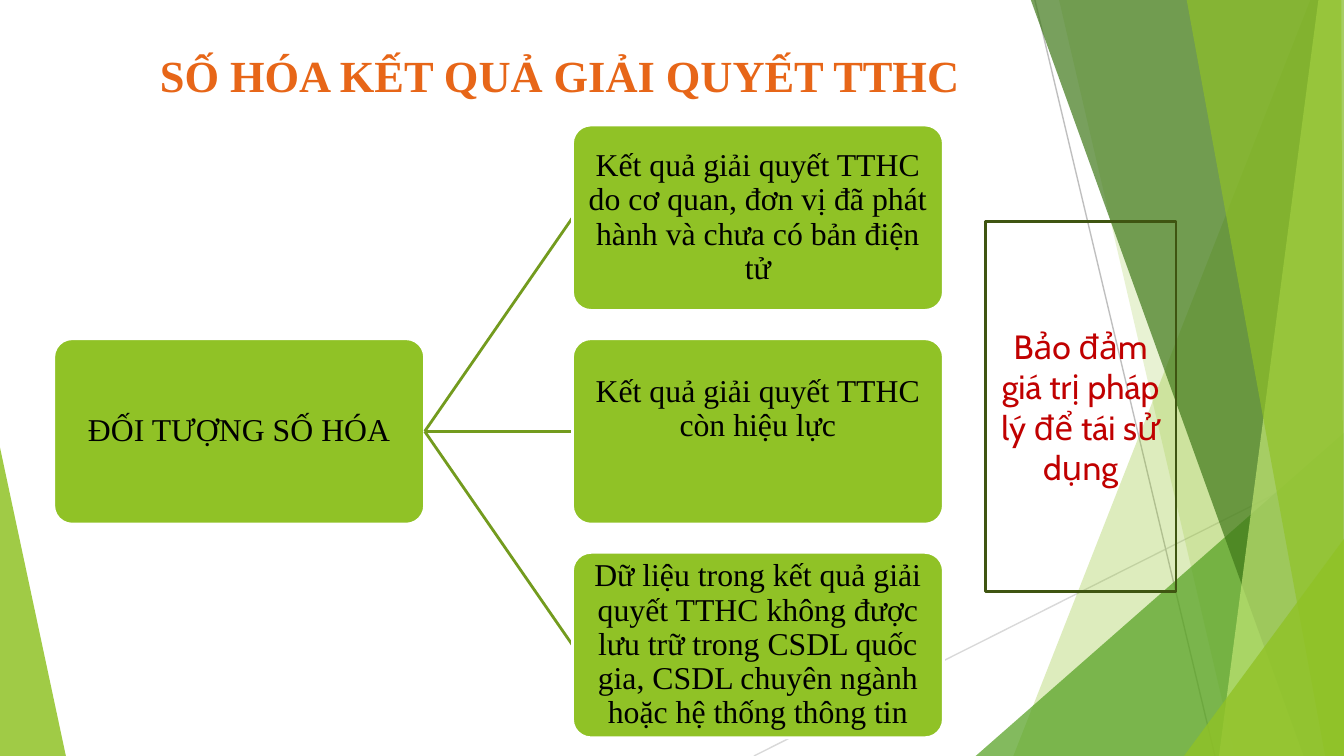
from pptx import Presentation
from pptx.dml.color import RGBColor
from pptx.enum.shapes import MSO_CONNECTOR, MSO_SHAPE
from pptx.enum.text import MSO_ANCHOR, PP_ALIGN
from pptx.oxml.ns import qn
from pptx.util import Inches, Pt
from lxml.etree import SubElement

# Content
TITLE = "SỐ HÓA KẾT QUẢ GIẢI QUYẾT TTHC"
ROOT = "ĐỐI TƯỢNG SỐ HÓA"
# Each leaf: text, extra room kept free below it
LEAVES = [
    ("Kết quả giải quyết TTHC do cơ quan, đơn vị đã phát "
     "hành và chưa có bản điện tử", 0),
    ("Kết quả giải quyết TTHC còn hiệu lực", 0.33),
    ("Dữ liệu trong kết quả giải quyết TTHC không được lưu trữ trong "
     "CSDL quốc gia, CSDL chuyên ngành hoặc hệ thống thông tin", 0),
]
NOTE = "Bảo đảm giá trị pháp lý để tái sử dụng"

THEME = {
    "lime": "90C226", "green": "54A021", "dark": "3F7819", "pale": "C0E474",
    "link": "739B1E", "frame": "3F5511", "title": "E76618", "note": "C00000",
    "text": "000000", "white": "FFFFFF", "ray1": "D9D9D9", "ray2": "BFBFBF",
    "serif": "Times New Roman", "sans": "Cabin",
    "title_size": 23.8, "box_size": 17, "note_size": 18,
}

# Backdrop: thin rays and see-through facets (colour, opacity %, corners)
WIDE = 10
HIGH = WIDE * 9 / 16
RAYS = [("ray1", (5.61, HIGH), (WIDE, 3.42)), ("ray2", (7.7, 0), (9.04, HIGH))]
FACETS = [
    ("lime", 30, [(9.75, 0), (7.54, HIGH), (WIDE, HIGH), (WIDE, 0)]),
    ("lime", 20, [(7.88, 0), (9.19, HIGH), (WIDE, HIGH), (WIDE, 0)]),
    ("green", 72, [(7.26, HIGH), (WIDE, 3.22), (WIDE, HIGH)]),
    ("dark", 70, [(7.67, 0), (9.7, HIGH), (WIDE, HIGH), (WIDE, 0)]),
    ("pale", 70, [(9.81, 0), (9.07, HIGH), (WIDE, HIGH), (WIDE, 0)]),
    ("lime", 65, [(8.83, 0), (9.86, HIGH), (WIDE, HIGH), (9.98, 0)]),
    ("lime", 80, [(8.81, HIGH), (WIDE, 4.01), (WIDE, HIGH)]),
]
WEDGE = ("lime", 85, [(0, 3.33), (0.49, HIGH), (0, HIGH)])

# Tree layout
BOX_W, BOX_H, PITCH = 2.76, 1.38, 1.59
ROOT_X, LEAF_X, TOP = 0.4, 4.26, 0.93

deck = Presentation()
deck.slide_width, deck.slide_height = Inches(WIDE), Inches(HIGH)
slide = deck.slides.add_slide(deck.slide_layouts[6])
shapes = slide.shapes


def color(name):
    return RGBColor.from_string(THEME[name])


def facet(name, alpha, points):
    spots = [(Inches(x), Inches(y)) for x, y in points]
    pen = shapes.build_freeform(*spots[0])
    pen.add_line_segments(spots[1:], close=True)
    part = pen.convert_to_shape()
    part.shadow.inherit = False
    part.fill.solid()
    part.fill.fore_color.rgb = color(name)
    part.line.fill.background()
    tint = part.element.spPr.find(qn("a:solidFill"))[0]
    SubElement(tint, qn("a:alpha")).set("val", str(alpha * 1000))


def line(name, width, start=(0, 0), end=(0, 0)):
    rule = shapes.add_connector(MSO_CONNECTOR.STRAIGHT,
                                *[Inches(v) for v in (*start, *end)])
    rule.line.color.rgb = color(name)
    rule.line.width = Pt(width)
    SubElement(rule.element.spPr, qn("a:effectLst"))
    return rule


def write(shape, text, size, font, tone, insets, bold=False,
          anchor=MSO_ANCHOR.MIDDLE, space=None):
    frame = shape.text_frame
    frame.text = text
    frame.word_wrap = True
    frame.vertical_anchor = anchor
    (frame.margin_left, frame.margin_top,
     frame.margin_right, frame.margin_bottom) = [Inches(v) for v in insets]
    para = frame.paragraphs[0]
    para.alignment = PP_ALIGN.CENTER
    para.line_spacing = space
    face = para.runs[0].font
    face.size, face.name, face.bold = Pt(THEME[size]), THEME[font], bold
    face.color.rgb = color(tone)


def block(kind, x, y, w, h, edge):
    part = shapes.add_shape(kind, *[Inches(v) for v in (x, y, w, h)])
    part.shadow.inherit = False
    part.fill.background()
    part.line.color.rgb = color(edge)
    part.line.width = Pt(1.5)
    return part


def node(text, x, row, room=0):
    part = block(MSO_SHAPE.ROUNDED_RECTANGLE, x, TOP + row * PITCH,
                 BOX_W, BOX_H, "white")
    part.adjustments[0] = 0.1
    part.fill.solid()
    part.fill.fore_color.rgb = color("lime")
    write(part, text, "box_size", "serif", "text",
          (0.05, 0.05, 0.05, 0.05 + room), space=0.9)
    return part


# Backdrop
facet(*WEDGE)
for name, start, end in RAYS:
    line(name, 0.75, start, end)
for item in FACETS:
    facet(*item)

# Title
title = shapes.add_textbox(Inches(0.5), Inches(0.31), Inches(6.83), Inches(0.65))
write(title, TITLE, "title_size", "serif", "title", (0.59, 0.05, 0.1, 0.05),
      bold=True, anchor=MSO_ANCHOR.TOP)

# Tree: root, links and leaves
root = node(ROOT, ROOT_X, 1)
for row, (text, room) in enumerate(LEAVES):
    leaf = node(text, LEAF_X, row, room)
    link = line("link", 1.5)
    link.begin_connect(root, 3)
    link.end_connect(leaf, 1)
    leaf.element.addprevious(link.element)  # link runs under the leaf's edge

# Side note
note = block(MSO_SHAPE.RECTANGLE, 7.33, 1.65, 1.42, 2.75, "frame")
write(note, NOTE, "note_size", "sans", "note", (0.1, 0.05, 0.1, 0.05))

deck.save("out.pptx")
